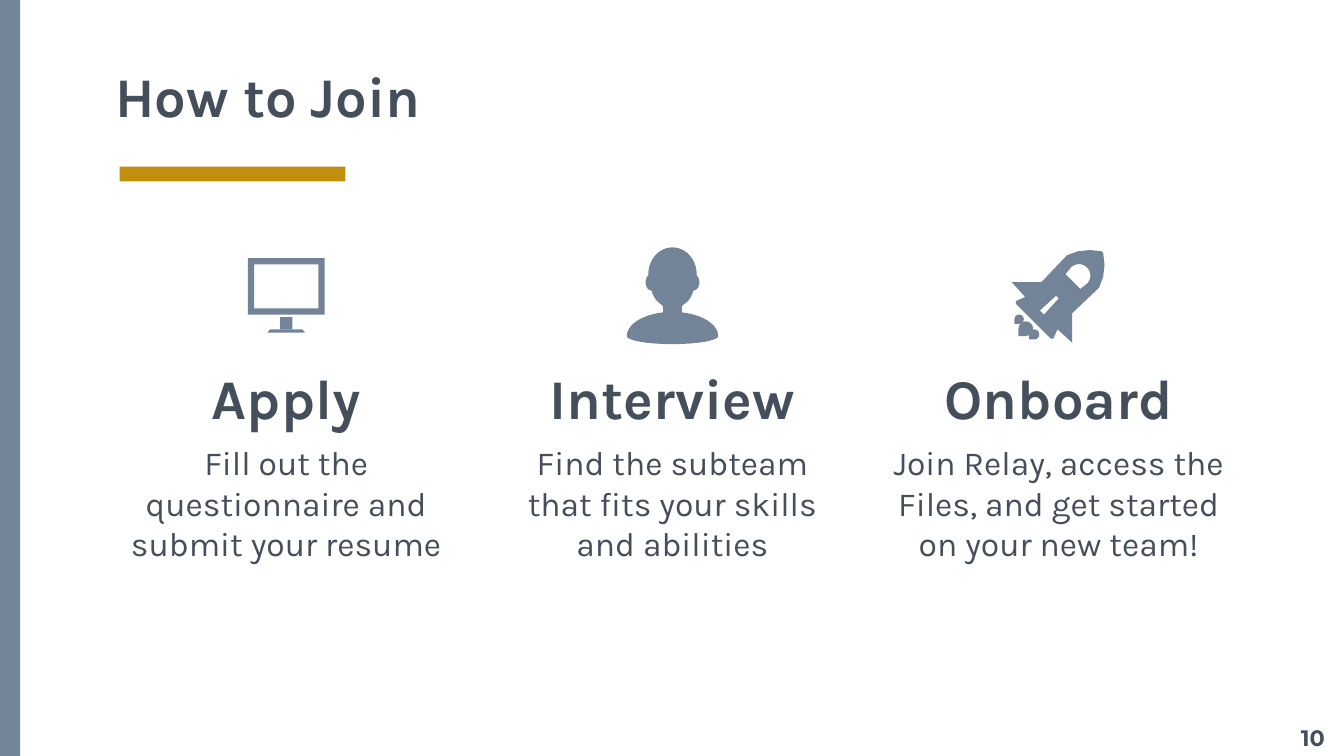
"""Build the "How to Join" slide with three illustrated steps."""
from math import cos, radians, sin

from pptx import Presentation
from pptx.dml.color import RGBColor
from pptx.enum import shapes, text
from pptx.util import Cm, Pt

SLATE = RGBColor(0x73, 0x84, 0x98)
GOLD = RGBColor(0xC2, 0x8E, 0x0E)
INK = RGBColor(0x45, 0x4F, 0x5B)
PRESET = shapes.MSO_SHAPE

TITLE = "How to Join"
PAGE_NUMBER = "10"
STEPS = [
    ("Apply", "Fill out the questionnaire and submit your resume"),
    ("Interview", "Find the subteam that fits your skills and abilities"),
    ("Onboard", "Join Relay, access the Files, and get started on your new team!"),
]

SLIDE_WIDTH, SLIDE_HEIGHT = 25.4, 14.29
COLUMN_LEFT, COLUMN_PITCH, COLUMN_WIDTH = 1.93, 7.3, 6.96
COLUMN_TOP, COLUMN_HEIGHT = 3.86, 9.8
ICON_CENTER_Y = 5.59
ICON_GRID = 0.0254


def arc(center_x, center_y, radius_x, radius_y, start, end, steps=12):
    """Return points on an ellipse; angles run clockwise from the right."""
    angles = [radians(start + (end - start) * i / steps) for i in range(steps + 1)]
    return [(center_x + radius_x * cos(a), center_y + radius_y * sin(a)) for a in angles]


def mirror(half, reflect):
    """Close a half outline with its reflection."""
    return half + [reflect(x, y) for x, y in reversed(half)]


def across_vertical(x, y):
    """Reflect a point in the vertical axis."""
    return -x, y


def across_diagonal(x, y):
    """Reflect a point in the axis that rises to the right."""
    return -y, -x


def paint(shape, color):
    """Give a shape a plain fill."""
    shape.fill.solid()
    shape.fill.fore_color.rgb = color
    shape.line.fill.background()
    shape.shadow.inherit = False


def add_preset(parent, kind, box, color):
    """Add a filled preset shape; the box is in centimetres."""
    shape = parent.add_shape(kind, *map(Cm, box))
    paint(shape, color)
    return shape


def add_text(parent, box, lines, anchor, alignment, font_name="Karla"):
    """Add a text box with one paragraph per (words, size, bold)."""
    frame = parent.add_textbox(*map(Cm, box)).text_frame
    frame.word_wrap = True
    frame.vertical_anchor = anchor
    frame.margin_left = frame.margin_right = Cm(0.25)
    frame.margin_top = frame.margin_bottom = Cm(0.25)
    for index, (words, size, bold) in enumerate(lines):
        paragraph = frame.add_paragraph() if index else frame.paragraphs[0]
        paragraph.alignment = alignment
        paragraph.space_before = Pt(6 if index else 0)
        run = paragraph.add_run()
        run.text = words
        run.font.name = font_name
        run.font.size = Pt(size)
        run.font.bold = bold
        run.font.color.rgb = INK


def add_icon_part(parent, center_x, kind, left, top, width, height):
    """Add a preset placed in grid units from the icon centre."""
    box = (center_x + left * ICON_GRID, ICON_CENTER_Y + top * ICON_GRID,
           width * ICON_GRID, height * ICON_GRID)
    return add_preset(parent, kind, box, SLATE)


def add_icon_outline(parent, center_x, contours):
    """Add a freeform; contours after the first cut holes."""
    placed = [[(Cm(center_x + x * ICON_GRID), Cm(ICON_CENTER_Y + y * ICON_GRID))
               for x, y in contour] for contour in contours]
    builder = parent.build_freeform(*placed[0][0], scale=1.0)
    for index, points in enumerate(placed):
        if index:
            builder.move_to(*points[0])
        builder.add_line_segments(points[1:], close=True)
    paint(builder.convert_to_shape(), SLATE)


def add_monitor(parent, center_x):
    """Draw a screen on a stand."""
    group = parent.add_group_shape().shapes
    screen = add_icon_part(group, center_x, PRESET.FRAME, -28.5, -28, 57, 42)
    screen.adjustments[0] = 0.11
    add_icon_part(group, center_x, PRESET.RECTANGLE, -4.5, 16, 9, 9)
    foot = add_icon_part(group, center_x, PRESET.TRAPEZOID, -14, 25, 28, 2.5)
    foot.adjustments[0] = 0.8


def add_person(parent, center_x):
    """Draw a head and shoulders, symmetric left to right."""
    crown = arc(0, -16, 18, 20, -90, 0)
    ear = arc(16, -10, 4, 6, -60, 90)
    jaw = arc(0, -8, 16, 17, 15, 60)
    neck = [(7, 8), (7, 12)]
    shoulder = arc(0, 30, 34, 18, -78, 0)
    base = arc(0, 30, 34, 6, 0, 90)
    half = crown + ear + jaw + neck + shoulder + base
    add_icon_outline(parent, center_x, [mirror(half, across_vertical)])


def add_rocket(parent, center_x):
    """Draw a rocket, symmetric about its flight line, with three flames."""
    group = parent.add_group_shape().shapes
    nose = [(32, -33), (23, -34), (14, -33), (6, -30)]
    fin = [(-13, -10), (-35, -10), (-25, 1)]
    tail = [(-32, 4), (-32, 6)]
    window = arc(15, -15, 8.5, 8.5, -45, -135) + [(5, -16)]
    slot = [(-2, 0), (-14, 11)]
    halves = [nose + fin + tail, window, slot]
    add_icon_outline(group, center_x, [mirror(half, across_diagonal) for half in halves])
    for left, top, size in [(-30, 19, 11), (-22, 25, 7.5), (-33, 14, 7)]:
        flame = add_icon_part(group, center_x, PRESET.TEAR, left, top, size, size)
        flame.rotation = 180


def main():
    """Lay out the slide and save it."""
    presentation = Presentation()
    presentation.slide_width = Cm(SLIDE_WIDTH)
    presentation.slide_height = Cm(SLIDE_HEIGHT)
    slide = presentation.slides.add_slide(presentation.slide_layouts[6])
    parent = slide.shapes

    add_preset(parent, PRESET.RECTANGLE, (2.26, 3.15, 4.27, 0.28), GOLD)
    add_preset(parent, PRESET.RECTANGLE, (0, 0, 0.38, SLIDE_HEIGHT), SLATE)
    add_text(parent, (COLUMN_LEFT, 1.32, 21.56, 1.37), [(TITLE, 30, True)],
             text.MSO_ANCHOR.BOTTOM, text.PP_ALIGN.LEFT)

    icons = [add_monitor, add_person, add_rocket]
    for index, ((heading, detail), add_icon) in enumerate(zip(STEPS, icons)):
        left = COLUMN_LEFT + index * COLUMN_PITCH
        add_text(parent, (left, COLUMN_TOP, COLUMN_WIDTH, COLUMN_HEIGHT),
                 [(heading, 30, True), (detail, 18, False)],
                 text.MSO_ANCHOR.MIDDLE, text.PP_ALIGN.CENTER)
        add_icon(parent, left + COLUMN_WIDTH / 2)

    add_text(parent, (23.77, 13.44, 1.52, 0.86), [(PAGE_NUMBER, 12, True)],
             text.MSO_ANCHOR.TOP, text.PP_ALIGN.RIGHT, "Montserrat")
    presentation.save("out.pptx")


if __name__ == "__main__":
    main()
